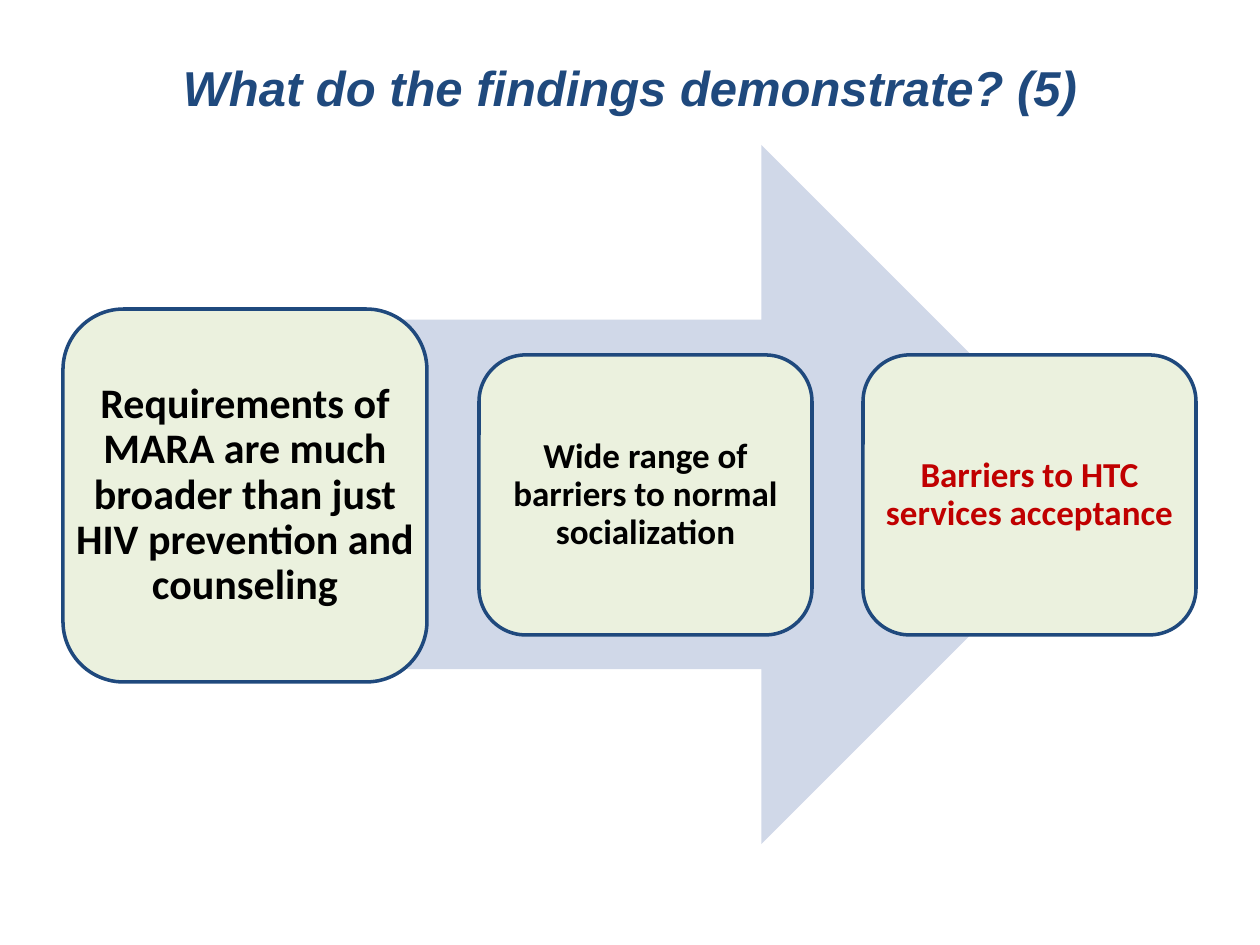
from dataclasses import dataclass

from pptx import Presentation
from pptx.dml.color import RGBColor
from pptx.enum.shapes import MSO_SHAPE
from pptx.enum.text import MSO_ANCHOR, PP_ALIGN
from pptx.util import Emu, Pt

PX_PER_INCH = 126
NAVY = RGBColor(0x1F, 0x49, 0x7D)
PALE_BLUE = RGBColor(0xD0, 0xD8, 0xE8)
PALE_GREEN = RGBColor(0xEB, 0xF1, 0xDE)
BLACK = RGBColor(0x00, 0x00, 0x00)
RED = RGBColor(0xC0, 0x00, 0x00)
ARROW = MSO_SHAPE.RIGHT_ARROW
ROUNDED = MSO_SHAPE.ROUNDED_RECTANGLE
MIDDLE = MSO_ANCHOR.MIDDLE
CENTER = PP_ALIGN.CENTER
ROW_CENTER = 495


@dataclass(frozen=True)
class Box:
    left: int
    top: int
    width: int
    height: int


@dataclass(frozen=True)
class Card:
    text: str
    left: int
    width: int
    height: int
    inset: int
    size: int
    color: RGBColor = BLACK

    @property
    def box(self) -> Box:
        return Box(self.left, ROW_CENTER - self.height // 2, self.width, self.height)


CARDS = (
    Card("Requirements of MARA are much broader than just HIV prevention and counseling",
         63, 364, 373, 12, 24),
    Card("Wide range of barriers to normal socialization", 479, 333, 280, 10, 20),
    Card("Barriers to HTC services acceptance", 863, 333, 280, 10, 20, RED),
)


def px(length: int) -> Emu:
    return Emu(round(length * 914400 / PX_PER_INCH))


def place(box: Box) -> tuple[Emu, ...]:
    return px(box.left), px(box.top), px(box.width), px(box.height)


def apply_format(target, values: dict) -> None:
    for name, value in values.items():
        setattr(target, name, value)


def add_text(slide, box: Box, text: str, inset: int, spacing: float, font: dict,
             color: RGBColor) -> None:
    frame = slide.shapes.add_textbox(*place(box)).text_frame
    apply_format(frame, {
        "word_wrap": True, "vertical_anchor": MIDDLE,
        "margin_left": px(inset), "margin_right": px(inset),
        "margin_top": px(inset), "margin_bottom": px(inset),
    })
    paragraph = frame.paragraphs[0]
    apply_format(paragraph, {"alignment": CENTER, "line_spacing": spacing})
    run = paragraph.add_run()
    run.text = text
    apply_format(run.font, font)
    run.font.color.rgb = color


def add_filled_shape(slide, kind, box: Box, fill: RGBColor):
    shape = slide.shapes.add_shape(kind, *place(box))
    shape.shadow.inherit = False
    shape.fill.solid()
    shape.fill.fore_color.rgb = fill
    shape.line.fill.background()
    return shape


def add_card(slide, card: Card) -> None:
    shape = add_filled_shape(slide, ROUNDED, card.box, PALE_GREEN)
    shape.line.color.rgb = NAVY
    shape.line.width = Pt(2)
    font = {"name": "Calibri", "size": Pt(card.size), "bold": True}
    add_text(slide, card.box, card.text, card.inset, 0.9, font, card.color)


def main() -> None:
    presentation = Presentation()
    apply_format(presentation, {"slide_width": px(1260), "slide_height": px(945)})
    slide = presentation.slides.add_slide(presentation.slide_layouts[6])
    title_font = {"name": "Arial", "size": Pt(28), "bold": True, "italic": True}
    add_text(slide, Box(63, 38, 1134, 97), "What do the findings demonstrate? (5)",
             6, 1.0, title_font, NAVY)
    add_filled_shape(slide, ARROW, Box(147, 145, 964, 699), PALE_BLUE)
    for card in CARDS:
        add_card(slide, card)
    presentation.save("out.pptx")


if __name__ == "__main__":
    main()
